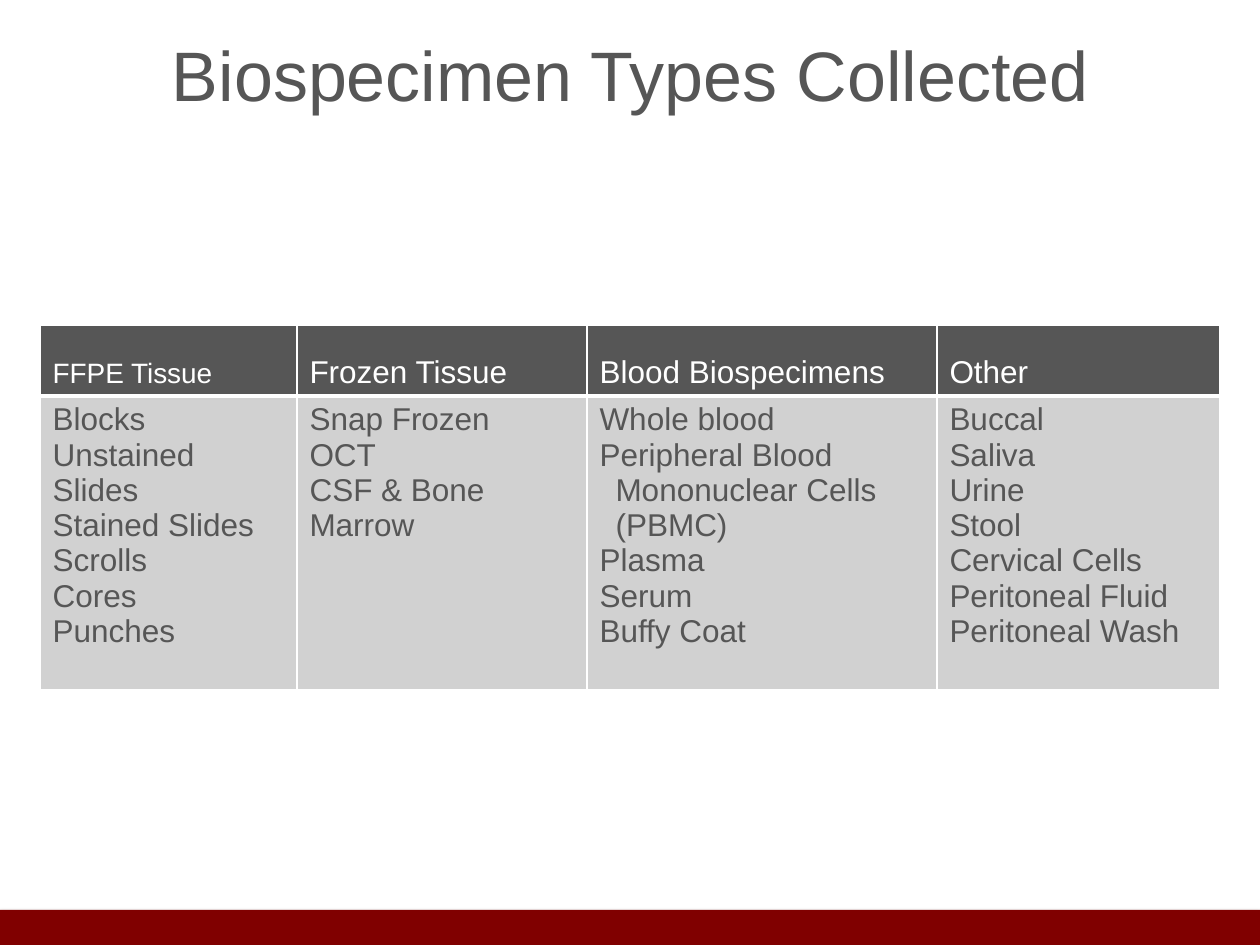
from lxml.etree import SubElement
from pptx import Presentation
from pptx.dml.color import RGBColor
from pptx.enum.shapes import MSO_SHAPE
from pptx.enum.text import MSO_ANCHOR, PP_ALIGN
from pptx.oxml.ns import qn
from pptx.util import Emu, Pt

GRAY = RGBColor(0x56, 0x56, 0x56)
LIGHT_GRAY = RGBColor(0xD1, 0xD1, 0xD1)
MAROON = RGBColor(0x80, 0x00, 0x00)
WHITE = RGBColor(0xFF, 0xFF, 0xFF)
BLACK = RGBColor(0x00, 0x00, 0x00)

COLUMN_WIDTHS = [257, 290, 350, 283]
ROW_HEIGHTS = [71, 294]
HEADERS = ["FFPE Tissue", "Frozen Tissue", "Blood Biospecimens", "Other"]
SPECIMENS = [
    ["Blocks", "Unstained Slides", "Stained Slides", "Scrolls", "Cores", "Punches"],
    ["Snap Frozen", "OCT", "CSF & Bone Marrow"],
    ["Whole blood", "Peripheral Blood Mononuclear Cells (PBMC)", "Plasma", "Serum",
     "Buffy Coat"],
    ["Buccal", "Saliva", "Urine", "Stool", "Cervical Cells",
     "Peritoneal Fluid Peritoneal Wash"],
]
HANGING = {"Peripheral Blood Mononuclear Cells (PBMC)": 16}


def px(length):
    return Emu(round(length * 914400 / 126))


def write_text(text_frame, lines, size=18, color=GRAY, align=PP_ALIGN.LEFT):
    """Write one paragraph per line, with a hanging indent where one is listed."""
    text_frame.word_wrap = True
    for index, line in enumerate(lines):
        paragraph = text_frame.paragraphs[0] if index == 0 else text_frame.add_paragraph()
        paragraph.alignment = align
        if line in HANGING:
            properties = paragraph._p.get_or_add_pPr()
            properties.set("marL", str(px(HANGING[line])))
            properties.set("indent", str(-px(HANGING[line])))
        run = paragraph.add_run()
        run.text = line
        run.font.name = "Arial"
        run.font.size = Pt(size)
        run.font.color.rgb = color


def set_borders(cell, bottom=1):
    """Draw white borders; they must come before the cell's fill."""
    properties = cell._tc.get_or_add_tcPr()
    for side, width in (("L", 1), ("R", 1), ("T", 1), ("B", bottom)):
        line = SubElement(properties, qn(f"a:ln{side}"), w=str(Pt(width)))
        fill = SubElement(line, qn("a:solidFill"))
        SubElement(fill, qn("a:srgbClr"), val=str(WHITE))


def add_footer_bar(slide, left, top, width, height):
    bar = slide.shapes.add_shape(
        MSO_SHAPE.RECTANGLE, px(left), px(top), px(width), px(height))
    bar.fill.solid()
    bar.fill.fore_color.rgb = MAROON
    bar.line.fill.background()
    # Soft shadow
    bar.shadow.inherit = False
    effects = bar._element.spPr.find(qn("a:effectLst"))
    shadow = SubElement(effects, qn("a:outerShdw"), blurRad=str(Pt(3.1)),
                        dist=str(Pt(1.8)), dir="5400000", rotWithShape="0")
    color = SubElement(shadow, qn("a:srgbClr"), val=str(BLACK))
    SubElement(color, qn("a:alpha"), val="35000")


def add_title(slide, left, top, width, height):
    title = slide.shapes.title
    title.left, title.top, title.width, title.height = map(px, (left, top, width, height))
    title.text_frame.vertical_anchor = MSO_ANCHOR.MIDDLE
    write_text(title.text_frame, ["Biospecimen Types Collected"], size=40,
               align=PP_ALIGN.CENTER)


def add_specimen_table(slide, left, top):
    table = slide.shapes.add_table(
        len(ROW_HEIGHTS), len(COLUMN_WIDTHS), px(left), px(top),
        px(sum(COLUMN_WIDTHS)), px(sum(ROW_HEIGHTS))).table
    for row, height in zip(table.rows, ROW_HEIGHTS):
        row.height = px(height)
    for index, width in enumerate(COLUMN_WIDTHS):
        table.columns[index].width = px(width)
        # Header cell
        header = table.cell(0, index)
        set_borders(header, bottom=3)
        header.fill.solid()
        header.fill.fore_color.rgb = GRAY
        header.vertical_anchor = MSO_ANCHOR.BOTTOM
        write_text(header.text_frame, [HEADERS[index]],
                   size=16 if index == 0 else 18, color=WHITE)
        for run in header.text_frame.paragraphs[0].runs:
            run.font.bold = False
        # List cell
        body = table.cell(1, index)
        set_borders(body)
        body.fill.solid()
        body.fill.fore_color.rgb = LIGHT_GRAY
        write_text(body.text_frame, SPECIMENS[index])


def main():
    presentation = Presentation()
    presentation.slide_width = px(1260)
    presentation.slide_height = px(945)
    slide = presentation.slides.add_slide(presentation.slide_layouts[5])
    add_footer_bar(slide, 0, 910, 1260, 35)
    add_specimen_table(slide, 40, 325)
    add_title(slide, 63, 17, 1134, 113)
    presentation.save("out.pptx")


if __name__ == "__main__":
    main()
